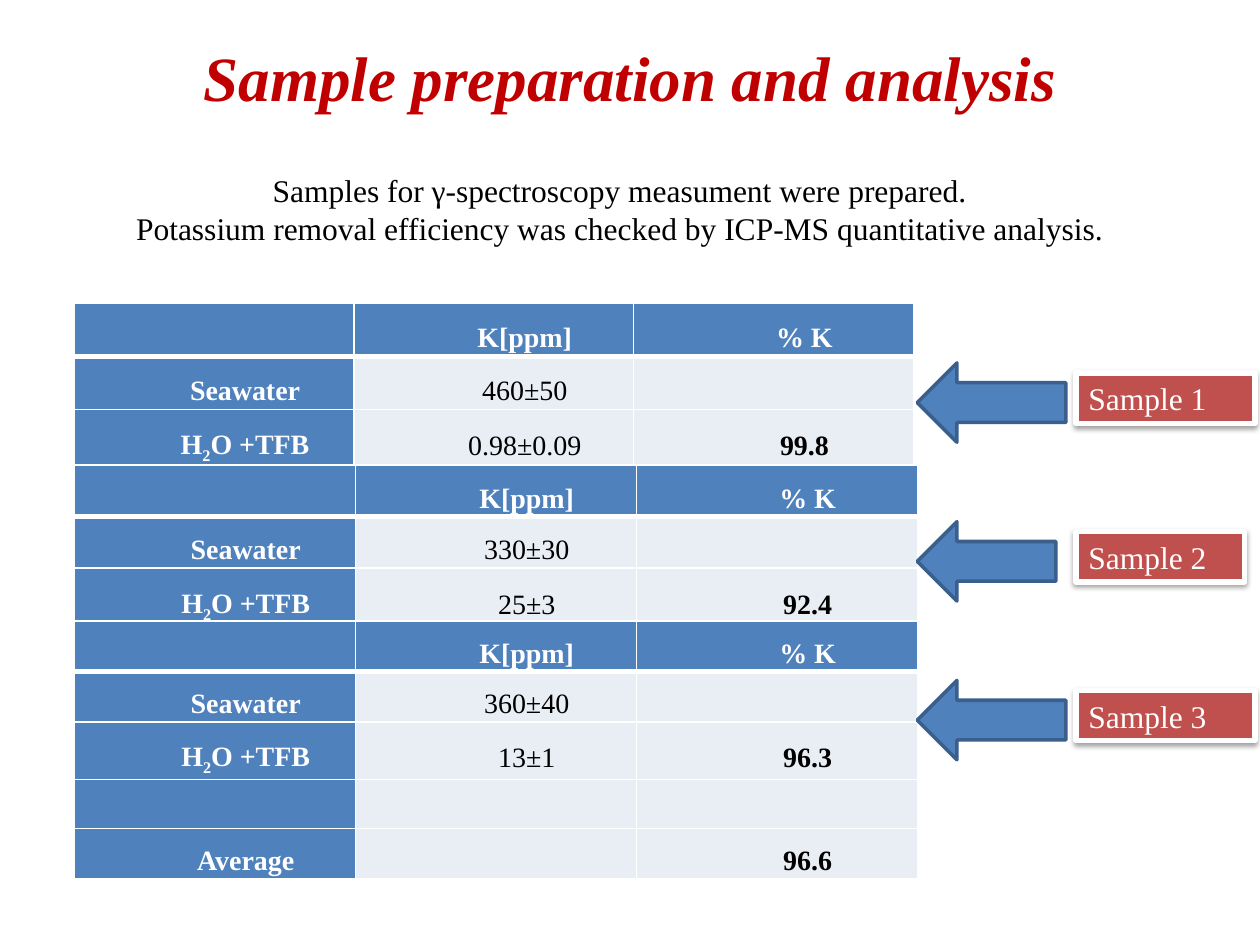
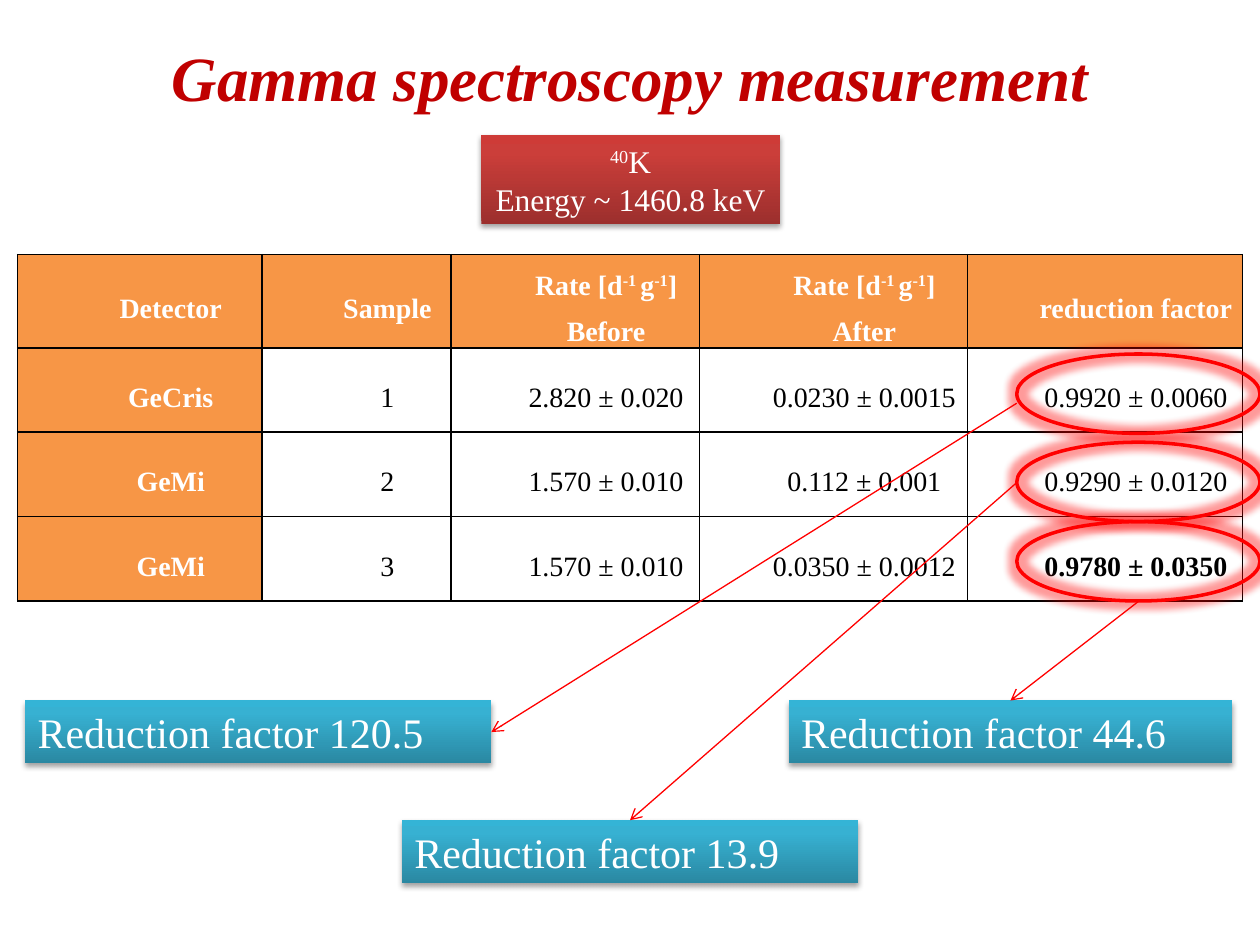
import copy

import pptx
import pptx.dml.color
import pptx.enum.shapes
import pptx.enum.text
import pptx.oxml.ns
import pptx.util
from lxml import etree

Inches = pptx.util.Inches
Pt = pptx.util.Pt
SHAPE = pptx.enum.shapes.MSO_SHAPE
ALIGN = pptx.enum.text.PP_ALIGN
ANCHOR = pptx.enum.text.MSO_ANCHOR
RESIZE = pptx.enum.text.MSO_AUTO_SIZE.SHAPE_TO_FIT_TEXT
qn = pptx.oxml.ns.qn

WHITE, BLACK, RED = "FFFFFF", "000000", "FF0000"
TITLE_RED, BLUE, PALE_BLUE, DARK_BLUE = "C00000", "4F81BD", "E9EDF4", "3A5F8C"
BRICK, ORANGE = "C0504D", "F79646"
RED_GRADIENT = ["9C2F2D", "CB3E3A", "CE3B37"]
TEAL_GRADIENT = ["2A88A2", "37B1D2", "34B4D6"]


def colour(hex_string):
    return pptx.dml.color.RGBColor.from_string(hex_string)


def child(parent, tag, **attributes):
    return etree.SubElement(parent, qn(tag), {k: str(v) for k, v in attributes.items()})


def box(left, top, width, height):
    return [Inches(v) for v in (left, top, width, height)]


class Deck:
    font = "Times New Roman"

    def __init__(self):
        self.prs = pptx.Presentation()
        self.prs.slide_width, self.prs.slide_height = Inches(10), Inches(7.5)
        self.slide = None

    def new_slide(self, title):
        self.slide = self.prs.slides.add_slide(self.prs.slide_layouts[5])
        heading = self.slide.shapes.title
        heading.left, heading.top, heading.width, heading.height = box(0.5, -0.02, 9, 1.25)
        heading.text_frame.vertical_anchor = ANCHOR.MIDDLE
        self.fill_text(heading.text_frame, [[title]], 36, TITLE_RED, ALIGN.CENTER,
                       bold=True, italic=True)

    def fill_text(self, frame, paragraphs, size, ink, align=ALIGN.LEFT, bold=False, italic=False):
        for i, runs in enumerate(paragraphs):
            paragraph = frame.add_paragraph() if i else frame.paragraphs[0]
            paragraph.alignment = align
            for piece in runs:
                text, baseline = (piece, 0) if isinstance(piece, str) else piece
                run = paragraph.add_run()
                run.text = text
                run.font.name, run.font.size = self.font, Pt(size)
                run.font.bold, run.font.italic = bold, italic
                run.font.color.rgb = colour(ink)
                if baseline:
                    run._r.get_or_add_rPr().set("baseline", str(baseline * 1000))

    def text(self, place, paragraphs, size, ink, align):
        frame = self.slide.shapes.add_textbox(*box(*place)).text_frame
        frame.word_wrap = True
        frame.auto_size = RESIZE
        self.fill_text(frame, paragraphs, size, ink, align)

    def shape(self, kind, place, fill=None, line=None, width=2):
        shape = self.slide.shapes.add_shape(kind, *box(*place))
        shape.shadow.inherit = False
        if fill is None:
            shape.fill.background()
        elif isinstance(fill, str):
            shape.fill.solid()
            shape.fill.fore_color.rgb = colour(fill)
        else:
            self.gradient(shape, fill)
        if line:
            shape.line.color.rgb = colour(line)
            shape.line.width = Pt(width)
        else:
            shape.line.fill.background()
        return shape

    def gradient(self, shape, colours):
        shape.fill.gradient()
        shape.fill.gradient_angle = 90
        stops = shape._element.spPr.find(".//" + qn("a:gsLst"))
        stops.append(copy.deepcopy(stops[0]))
        for stop, hue, position in zip(shape.fill.gradient_stops, colours, (0, 0.8, 1)):
            stop.color.rgb = colour(hue)
            stop.position = position

    def effect(self, shape, tag, hue, opacity, **attributes):
        effects = shape._element.spPr.find(qn("a:effectLst"))
        tint = child(child(effects, tag, **attributes), "a:srgbClr", val=hue)
        child(tint, "a:alpha", val=opacity * 1000)

    def label(self, place, paragraphs, size, fill, line=None, align=ALIGN.LEFT, wrap=True):
        label = self.shape(SHAPE.RECTANGLE, place, fill, line, 3)
        self.effect(label, "a:outerShdw", BLACK, 36, blurRad=Pt(3.1), dist=Pt(1.7),
                    dir=5400000, rotWithShape=0)
        frame = label.text_frame
        frame.word_wrap = wrap
        frame.auto_size = RESIZE
        self.fill_text(frame, paragraphs, size, WHITE, align)
        return label

    def ring(self, place):
        ring = self.shape(SHAPE.OVAL, place, line=RED)
        self.effect(ring, "a:glow", RED, 40, rad=Pt(8))

    def arrow(self, start, target, side):
        x, y = (Inches(v) for v in start)
        arrow = self.slide.shapes.add_connector(pptx.enum.shapes.MSO_CONNECTOR.STRAIGHT, x, y, x, y)
        arrow.end_connect(target, side)
        arrow.line.color.rgb = colour(RED)
        arrow.line.width = Pt(0.75)
        properties = arrow._element.spPr
        child(properties.find(qn("a:ln")), "a:tailEnd", type="arrow")
        child(properties, "a:effectLst")

    def table(self, left, top, widths, row_height, rows, head, body, border, rule, bold_cells):
        table = self.slide.shapes.add_table(
            len(rows), len(widths),
            *box(left, top, sum(widths), row_height * len(rows))).table
        table.horz_banding = False
        for column, width in zip(table.columns, widths):
            column.width = Inches(width)
        for r, row in enumerate(rows):
            table.rows[r].height = Inches(row_height)
            for c, paragraphs in enumerate(row):
                heading = r == 0 or c == 0
                cell = table.cell(r, c)
                self.borders(cell, border, rule if r == 1 else 1, rule if r == 0 else 1)
                cell.fill.solid()
                cell.fill.fore_color.rgb = colour(head if heading else body)
                self.cell_text(cell, paragraphs, WHITE if heading else BLACK,
                               heading or (r, c) in bold_cells)

    def borders(self, cell, hue, top, bottom):
        properties = cell._tc.get_or_add_tcPr()
        for tag, width in (("a:lnL", 1), ("a:lnR", 1), ("a:lnT", top), ("a:lnB", bottom)):
            line = child(properties, tag, w=Pt(width))
            child(child(line, "a:solidFill"), "a:srgbClr", val=hue)

    def cell_text(self, cell, paragraphs, ink, bold):
        cell.vertical_anchor = ANCHOR.MIDDLE
        cell.margin_left = cell.margin_right = Inches(0.07)
        cell.margin_top = cell.margin_bottom = 0
        self.fill_text(cell.text_frame, paragraphs, 16, ink, ALIGN.CENTER, bold)
        if paragraphs:
            for paragraph in cell.text_frame.paragraphs:
                paragraph.line_spacing = 1.5
                properties = paragraph._p.get_or_add_pPr()
                properties.set("marL", "0")
                properties.set("indent", str(Inches(0.49)))


def plain(*texts):
    return [[[text]] if text else [] for text in texts]


def preparation(deck):
    deck.new_slide("Sample preparation and analysis")
    deck.text((0.51, 1.31, 8.82, 0.71), [
        ["Samples for γ-spectroscopy measument were prepared."],
        ["Potassium removal efficiency was checked by ICP-MS quantitative analysis."],
    ], 18, BLACK, ALIGN.CENTER)

    treated = [["H", ("2", -25), "O +TFB"]]
    average = [plain("", "", ""), plain("Average", "", "96.6")]
    samples = [
        (2.41, 2.22, 0.42, "460±50", "0.98±0.09", "99.8", []),
        (3.69, 2.23, 0.41, "330±30", "25±3", "92.4", []),
        (4.93, 2.23, 0.39, "360±40", "13±1", "96.3", average),
    ]
    for top, width, height, before, after, removed, extra in samples:
        rows = [plain("", "K[ppm]", "% K"), plain("Seawater", before, ""),
                [treated] + plain(after, removed)] + extra
        deck.table(0.59, top, [width] * 3, height, rows, BLUE, PALE_BLUE, WHITE, 3,
                   {(2, 2), (4, 2)})

    for i, (label_width, arrow_width) in enumerate([(1.42, 1.18), (1.34, 1.1), (1.42, 1.18)]):
        offset = 1.26 * i
        deck.label((8.54, 2.96 + offset, label_width, 0.4), [[f"Sample {i + 1}"]], 18, BRICK, WHITE)
        pointer = deck.shape(SHAPE.RIGHT_ARROW, (7.28, 2.88 + offset, arrow_width, 0.63),
                             BLUE, DARK_BLUE)
        pointer.rotation = 180


def spectroscopy(deck):
    deck.new_slide("Gamma spectroscopy measurement")
    rate = ["Rate [d", ("-1 ", 30), "g", ("-1", 30), "]"]
    rows = [
        plain("Detector", "Sample") + [[rate, ["Before"]], [rate, ["After"]]]
        + plain("reduction factor"),
        plain("GeCris", "1", "2.820 ± 0.020", "0.0230 ± 0.0015", "0.9920 ± 0.0060"),
        plain("GeMi", "2", "1.570 ± 0.010", "0.112 ± 0.001", "0.9290 ± 0.0120"),
        plain("GeMi", "3", "1.570 ± 0.010", "0.0350 ± 0.0012", "0.9780 ± 0.0350"),
    ]
    deck.table(0.14, 2.02, [1.94, 1.5, 1.97, 2.13, 2.18], 0.67, rows, ORANGE, WHITE, BLACK, 1,
               {(3, 4)})
    deck.label((3.82, 1.07, 2.37, 0.71), [[("40", 30), "K"], ["Energy ~ 1460.8 keV"]],
               18, RED_GRADIENT, align=ALIGN.CENTER, wrap=False)

    for top in (2.81, 3.51, 4.14):
        deck.ring((8.07, top, 1.93, 0.63))

    reductions = [
        ("120.5", 0.2, 5.56, 3.7, (8.07, 3.2), 3),
        ("13.9", 3.19, 6.51, 3.62, (8.07, 3.83), 0),
        ("44.6", 6.26, 5.56, 3.52, (9.04, 4.77), 0),
    ]
    for factor, left, top, width, start, side in reductions:
        result = deck.label((left, top, width, 0.5), [[f"Reduction factor {factor}"]],
                            24, TEAL_GRADIENT)
        deck.arrow(start, result, side)


def main():
    deck = Deck()
    preparation(deck)
    spectroscopy(deck)
    deck.prs.save("out.pptx")


if __name__ == "__main__":
    main()
